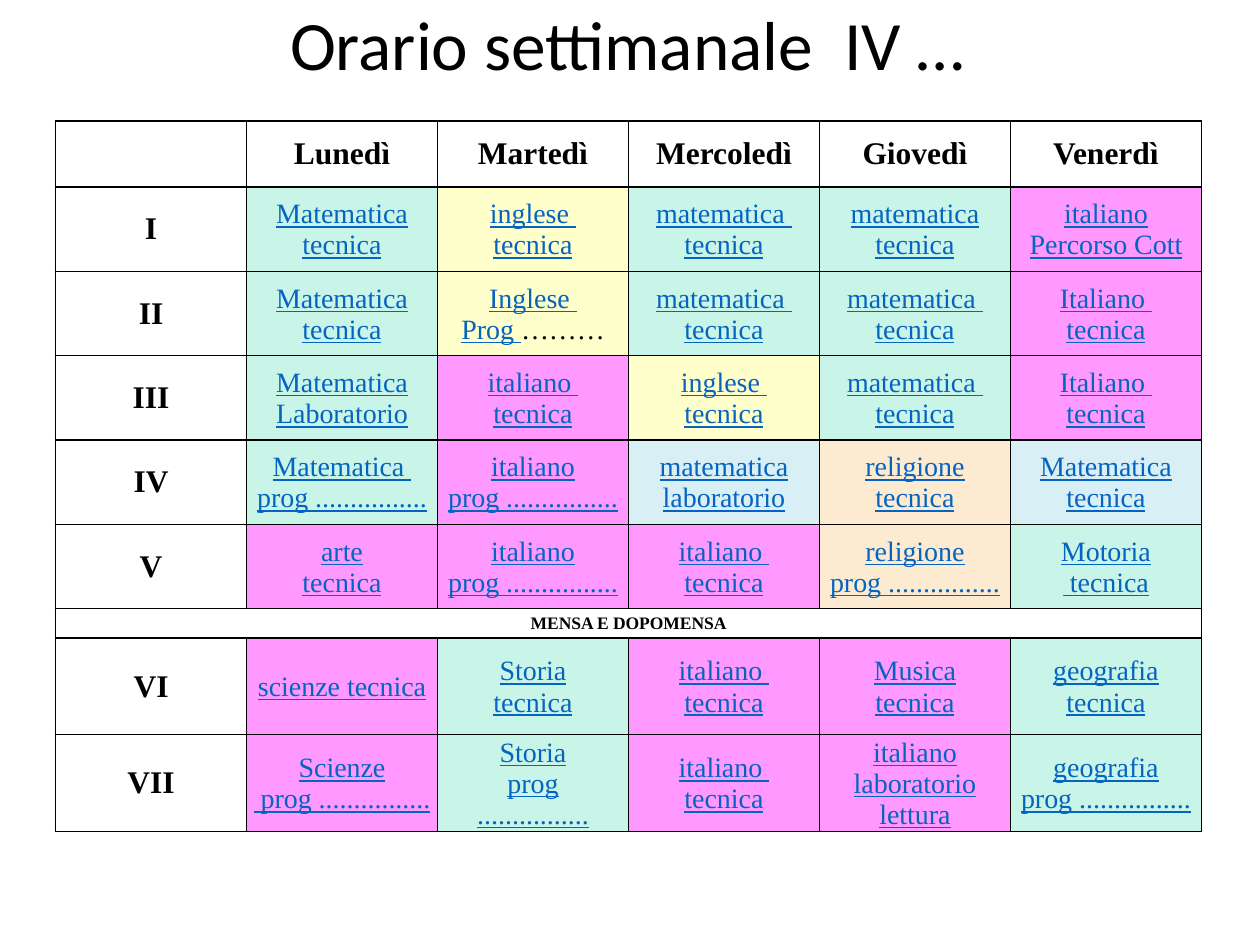
import pptx
import pptx.dml.color
import pptx.enum.text
import pptx.oxml
import pptx.oxml.ns
import pptx.util
from dataclasses import dataclass, field

Cm = pptx.util.Cm
Pt = pptx.util.Pt


@dataclass(frozen=True)
class Theme:
    title_font: str = "Calibri"
    table_font: str = "Times New Roman"
    title_size: float = 39.6
    heading_size: float = 18
    lesson_size: float = 16
    break_size: float = 10
    text: str = "000000"
    link: str = "0563C1"
    fills: dict = field(default_factory=lambda: {
        "white": "FFFFFF", "green": "C8F5E8", "yellow": "FFFFCC",
        "pink": "FF99FF", "blue": "D7EFF5", "peach": "FCEBD1",
    })


THEME = Theme()
TITLE = "Orario settimanale  IV …"
DAYS = ["Lunedì", "Martedì", "Mercoledì", "Giovedì", "Venerdì"]
BREAK = "MENSA E DOPOMENSA"
DOTS = "................"
# Each lesson is (fill, lines); a "|" starts text that is not underlined.
MORNING = {
    "I": [("green", "Matematica\ntecnica"), ("yellow", "inglese \ntecnica"),
          ("green", "matematica \ntecnica"), ("green", "matematica\ntecnica"),
          ("pink", "italiano\nPercorso Cott")],
    "II": [("green", "Matematica\ntecnica"), ("yellow", "Inglese \nProg |………"),
           ("green", "matematica \ntecnica"), ("green", "matematica \ntecnica"),
           ("pink", "Italiano \ntecnica")],
    "III": [("green", "Matematica\nLaboratorio"), ("pink", "italiano \ntecnica"),
            ("yellow", "inglese \ntecnica"), ("green", "matematica \ntecnica"),
            ("pink", "Italiano \ntecnica")],
    "IV": [("green", f"Matematica  prog {DOTS}"), ("pink", f"italiano prog {DOTS}"),
           ("blue", "matematica laboratorio"), ("peach", "religione\ntecnica"),
           ("blue", "Matematica\ntecnica")],
    "V": [("pink", "arte\ntecnica"), ("pink", f"italiano prog {DOTS}"),
          ("pink", "italiano \ntecnica"), ("peach", f"religione\nprog {DOTS}"),
          ("green", "Motoria\n tecnica")],
}
AFTERNOON = {
    "VI": [("pink", "scienze tecnica"), ("green", "Storia\ntecnica"),
           ("pink", "italiano \ntecnica"), ("pink", "Musica\ntecnica"),
           ("green", "geografia\ntecnica")],
    "VII": [("pink", f"Scienze\n prog {DOTS}"), ("green", f"Storia\nprog\n{DOTS}"),
            ("pink", "italiano \ntecnica"), ("pink", "italiano laboratorio lettura"),
            ("green", f"geografia\nprog {DOTS}")],
}
HEADER_HEIGHT, MORNING_HEIGHT, BREAK_HEIGHT, AFTERNOON_HEIGHT = 1.33, 1.7, 0.57, 1.95
COLUMN_WIDTH = 3.85


def set_format(target, values):
    for name, value in values.items():
        setattr(target, name, value)


def format_run(run, size, color, font=THEME.table_font, **values):
    set_format(run.font, {"name": font, "size": Pt(size), **values})
    run.font.color.rgb = pptx.dml.color.RGBColor.from_string(color)


def add_title(slide):
    title = slide.shapes.title
    set_format(title, {"left": Cm(1.7), "top": Cm(0.46),
                       "width": Cm(21.9), "height": Cm(1)})
    frame = title.text_frame
    set_format(frame, {"auto_size": pptx.enum.text.MSO_AUTO_SIZE.NONE,
                       "vertical_anchor": pptx.enum.text.MSO_ANCHOR.MIDDLE})
    paragraph = frame.paragraphs[0]
    set_format(paragraph, {"text": TITLE, "line_spacing": 0.9,
                           "alignment": pptx.enum.text.PP_ALIGN.CENTER})
    format_run(paragraph.runs[0], THEME.title_size, THEME.text, THEME.title_font)


def style_cell(cell, fill="white", margins=(0.18, 0.1, 0.18, 0.1)):
    """Give the cell black borders, a solid fill, margins and a middle anchor."""
    properties = cell._tc.get_or_add_tcPr()
    for side in "LRTB":
        properties.append(pptx.oxml.parse_xml(
            f'<a:ln{side} {pptx.oxml.ns.nsdecls("a")} w="12700"><a:solidFill>'
            f'<a:srgbClr val="{THEME.text}"/></a:solidFill></a:ln{side}>'))
    cell.fill.solid()
    cell.fill.fore_color.rgb = pptx.dml.color.RGBColor.from_string(THEME.fills[fill])
    cell.vertical_anchor = pptx.enum.text.MSO_ANCHOR.MIDDLE
    names = ("margin_left", "margin_top", "margin_right", "margin_bottom")
    set_format(cell, dict(zip(names, map(Cm, margins))))


def fill_heading(cell, text, size=THEME.heading_size):
    style_cell(cell)
    if text:
        paragraph = cell.text_frame.paragraphs[0]
        paragraph.alignment = pptx.enum.text.PP_ALIGN.CENTER
        paragraph.text = text
        format_run(paragraph.runs[0], size, THEME.text, bold=True)


def fill_lesson(cell, fill, text):
    style_cell(cell, fill, (0.03, 0.03, 0.03, 0))
    cell.text = text.replace("|", "")
    for paragraph, line in zip(cell.text_frame.paragraphs, text.split("\n")):
        paragraph.alignment = pptx.enum.text.PP_ALIGN.CENTER
        linked, _, plain = line.partition("|")
        paragraph.runs[0].text = linked
        format_run(paragraph.runs[0], THEME.lesson_size, THEME.link, bold=False, underline=True)
        if plain:
            run = paragraph.add_run()
            run.text = plain
            format_run(run, THEME.lesson_size, THEME.text, bold=False, underline=False)


def fill_lessons(table, first_row, lessons):
    for row, (hour, entries) in enumerate(lessons.items(), first_row):
        fill_heading(table.cell(row, 0), hour)
        for column, (fill, text) in enumerate(entries, 1):
            fill_lesson(table.cell(row, column), fill, text)


def add_timetable(slide):
    heights = ([HEADER_HEIGHT] + [MORNING_HEIGHT] * len(MORNING)
               + [BREAK_HEIGHT] + [AFTERNOON_HEIGHT] * len(AFTERNOON))
    headings = [""] + DAYS
    table = slide.shapes.add_table(
        len(heights), len(headings), Cm(1.12), Cm(2.44),
        Cm(COLUMN_WIDTH * len(headings)), Cm(sum(heights))).table
    set_format(table, {"first_row": False, "horz_banding": False})
    for row, height in zip(table.rows, heights):
        row.height = Cm(height)
    break_row = len(MORNING) + 1
    for index, (column, heading) in enumerate(zip(table.columns, headings)):
        column.width = Cm(COLUMN_WIDTH)
        fill_heading(table.cell(0, index), heading)
        fill_heading(table.cell(break_row, index), "" if index else BREAK, THEME.break_size)
    table.cell(break_row, 0).merge(table.cell(break_row, len(DAYS)))
    fill_lessons(table, 1, MORNING)
    fill_lessons(table, break_row + 1, AFTERNOON)


def main():
    presentation = pptx.Presentation()
    set_format(presentation, {"slide_width": Cm(25.4), "slide_height": Cm(19.05)})
    slide = presentation.slides.add_slide(presentation.slide_layouts.get_by_name("Title Only"))
    add_title(slide)
    add_timetable(slide)
    presentation.save("out.pptx")


if __name__ == "__main__":
    main()
